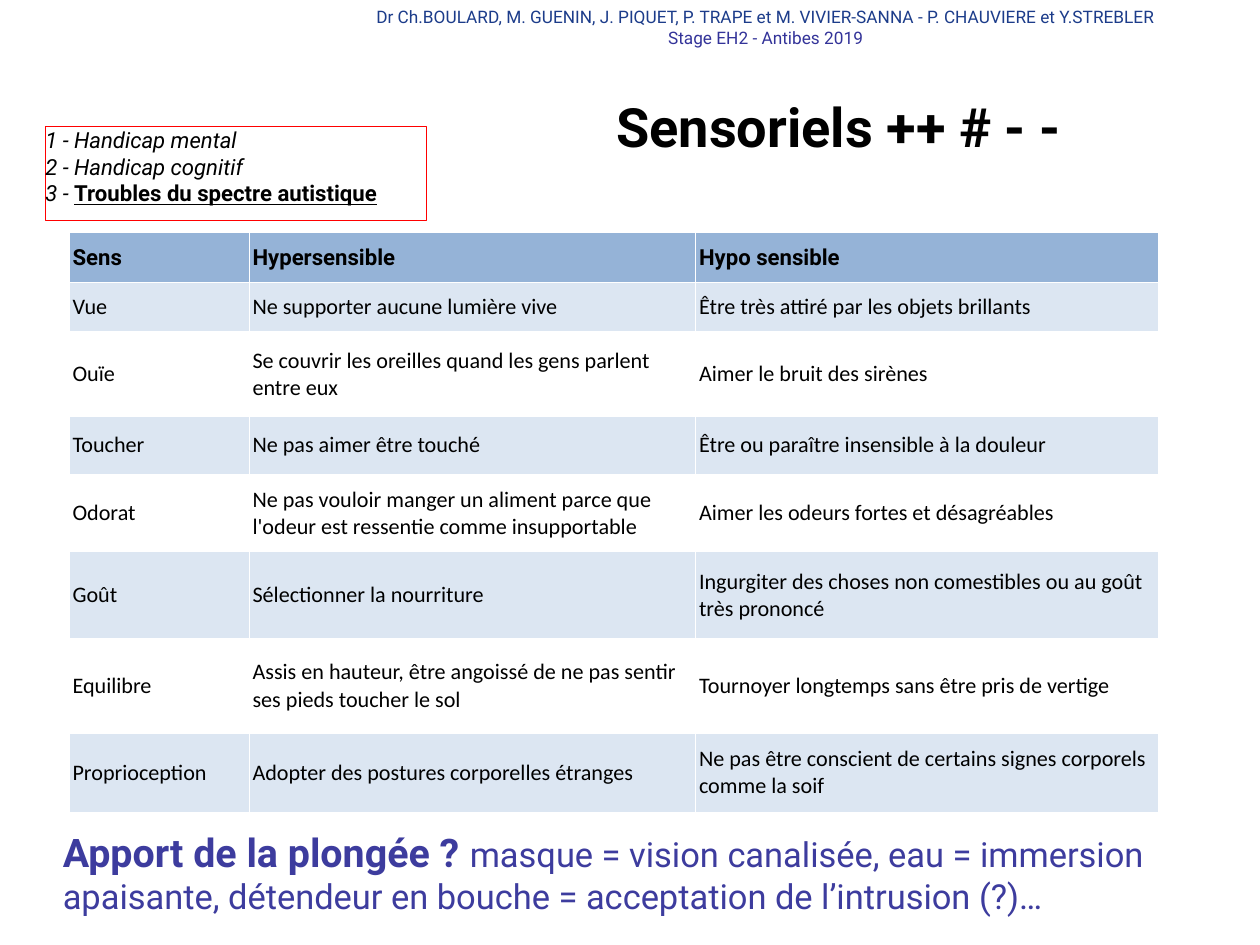
from dataclasses import dataclass

from lxml.etree import SubElement
from pptx import Presentation
from pptx.dml.color import RGBColor
from pptx.enum.shapes import MSO_SHAPE
from pptx.enum.text import MSO_ANCHOR, PP_ALIGN
from pptx.oxml.ns import qn
from pptx.util import Cm, Pt


@dataclass(frozen=True)
class Theme:
    heading_font: str = "Roboto"
    body_font: str = "Calibri"
    black: str = "000000"
    white: str = "FFFFFF"
    red: str = "FF0000"
    navy: str = "1C3C8A"
    indigo: str = "333399"
    violet: str = "3D3C9E"
    header_fill: str = "95B3D7"
    band_fill: str = "DCE6F2"
    title_size: int = 44
    question_size: int = 32
    answer_size: int = 28
    text_size: int = 18
    credit_size: int = 14


THEME = Theme()
NO_GRID_STYLE = "{2D5ABB26-0587-4C30-8999-92F81FD0307C}"
COLUMN_WIDTHS = [5.16, 12.8, 13.28]
ROW_HEIGHTS = [1.42, 1.42, 2.41, 1.68, 2.21, 2.49, 2.72, 2.26]
SENSES = [
    ("Sens", "Hypersensible", "Hypo sensible"),
    ("Vue", "Ne supporter aucune lumière vive", "Être très attiré par les objets brillants"),
    ("Ouïe", "Se couvrir les oreilles quand les gens parlent entre eux", "Aimer le bruit des sirènes"),
    ("Toucher", "Ne pas aimer être touché", "Être ou paraître insensible à la douleur"),
    ("Odorat", "Ne pas vouloir manger un aliment parce que l'odeur est ressentie comme insupportable",
     "Aimer les odeurs fortes et désagréables"),
    ("Goût", "Sélectionner la nourriture", "Ingurgiter des choses non comestibles ou au goût très prononcé"),
    ("Equilibre", "Assis en hauteur, être angoissé de ne pas sentir ses pieds toucher le sol",
     "Tournoyer longtemps sans être pris de vertige"),
    ("Proprioception", "Adopter des postures corporelles étranges",
     "Ne pas être conscient de certains signes corporels comme la soif"),
]


def color(value):
    return RGBColor.from_string(value)


def add_run(paragraph, text, size, ink=THEME.black, font=THEME.heading_font,
            bold=False, italic=False, underline=False):
    run = paragraph.add_run()
    run.text = text
    run.font.name = font
    run.font.size = Pt(size)
    run.font.color.rgb = color(ink)
    run.font.bold = bold
    run.font.italic = italic
    run.font.underline = underline


def add_text_box(slide, left, top, width, height, count=1,
                 align=PP_ALIGN.LEFT, anchor=MSO_ANCHOR.TOP, inset=0):
    frame = slide.shapes.add_textbox(Cm(left), Cm(top), Cm(width), Cm(height)).text_frame
    frame.word_wrap = True
    frame.vertical_anchor = anchor
    frame.margin_left = frame.margin_right = Cm(inset)
    frame.margin_top = frame.margin_bottom = Cm(inset)
    for _ in range(count - 1):
        frame.add_paragraph()
    for paragraph in frame.paragraphs:
        paragraph.alignment = align
    return frame.paragraphs


def add_outline(slide, left, top, width, height):
    shape = slide.shapes.add_shape(MSO_SHAPE.RECTANGLE, Cm(left), Cm(top), Cm(width), Cm(height))
    shape.shadow.inherit = False
    shape.fill.background()
    shape.line.color.rgb = color(THEME.red)
    shape.line.width = Pt(1)


def add_credits(slide):
    authors, course = add_text_box(slide, 10.42, 0, 23.06, 1.55, 2, PP_ALIGN.CENTER, inset=0.18)
    add_run(authors, "Dr Ch.BOULARD, M. GUENIN, J. PIQUET, P. TRAPE et M. VIVIER-SANNA"
            " - P. CHAUVIERE et Y.STREBLER", THEME.credit_size, THEME.navy)
    add_run(course, "Stage EH2 - Antibes 2019", THEME.credit_size, THEME.indigo)


def add_outline_list(slide):
    add_outline(slide, 1.3, 3.63, 10.92, 2.69)
    mental, cognitive, autism = add_text_box(slide, 1.3, 3.63, 10.9, 2.34, 3)
    add_run(mental, "1 - Handicap mental", THEME.text_size, italic=True)
    add_run(cognitive, "2 - Handicap cognitif", THEME.text_size, italic=True)
    add_run(autism, "3 - ", THEME.text_size, italic=True)
    add_run(autism, "Troubles du spectre autistique", THEME.text_size, bold=True, underline=True)


def add_title(slide):
    title, = add_text_box(slide, 13.77, 1.93, 20.55, 3.35,
                          align=PP_ALIGN.CENTER, anchor=MSO_ANCHOR.MIDDLE)
    add_run(title, "Sensoriels ++ # - -", THEME.title_size, bold=True)


def add_conclusion(slide):
    conclusion, = add_text_box(slide, 1.8, 23.75, 32.51, 3.33)
    add_run(conclusion, "Apport de la plongée ? ", THEME.question_size, THEME.violet, bold=True)
    add_run(conclusion, "masque = vision canalisée, eau = immersion apaisante, détendeur en bouche"
            " = acceptation de l’intrusion (?)…", THEME.answer_size, THEME.violet)


def set_borders(cell):
    properties = cell._tc.get_or_add_tcPr()
    for position, side in enumerate(("a:lnL", "a:lnR", "a:lnT", "a:lnB")):
        line = properties.makeelement(qn(side), {"w": str(Pt(1))})
        fill = SubElement(line, qn("a:solidFill"))
        SubElement(fill, qn("a:srgbClr"), val=THEME.white)
        properties.insert(position, line)


def fill_cell(cell, text, row):
    cell.vertical_anchor = MSO_ANCHOR.MIDDLE
    cell.margin_left = cell.margin_right = Cm(0.1)
    cell.margin_top = cell.margin_bottom = Cm(0.1)
    if row == 0 or row % 2:
        cell.fill.solid()
        cell.fill.fore_color.rgb = color(THEME.band_fill if row else THEME.header_fill)
    else:
        cell.fill.background()
    set_borders(cell)
    font = THEME.body_font if row else THEME.heading_font
    add_run(cell.text_frame.paragraphs[0], text, THEME.text_size, font=font, bold=row == 0)


def add_senses_table(slide):
    frame = slide.shapes.add_table(len(SENSES), len(COLUMN_WIDTHS), Cm(1.98), Cm(6.68),
                                   Cm(sum(COLUMN_WIDTHS)), Cm(sum(ROW_HEIGHTS)))
    table = frame.table
    table._tbl.tblPr.find(qn("a:tableStyleId")).text = NO_GRID_STYLE
    for column, width in zip(table.columns, COLUMN_WIDTHS):
        column.width = Cm(width)
    for index, (row, height) in enumerate(zip(table.rows, ROW_HEIGHTS)):
        row.height = Cm(height)
        for cell, text in zip(row.cells, SENSES[index]):
            fill_cell(cell, text, index)


def main():
    presentation = Presentation()
    presentation.slide_width = Cm(36.12)
    presentation.slide_height = Cm(27.1)
    slide = presentation.slides.add_slide(presentation.slide_layouts[6])
    add_outline_list(slide)
    add_credits(slide)
    add_conclusion(slide)
    add_title(slide)
    add_senses_table(slide)
    presentation.save("out.pptx")


if __name__ == "__main__":
    main()
